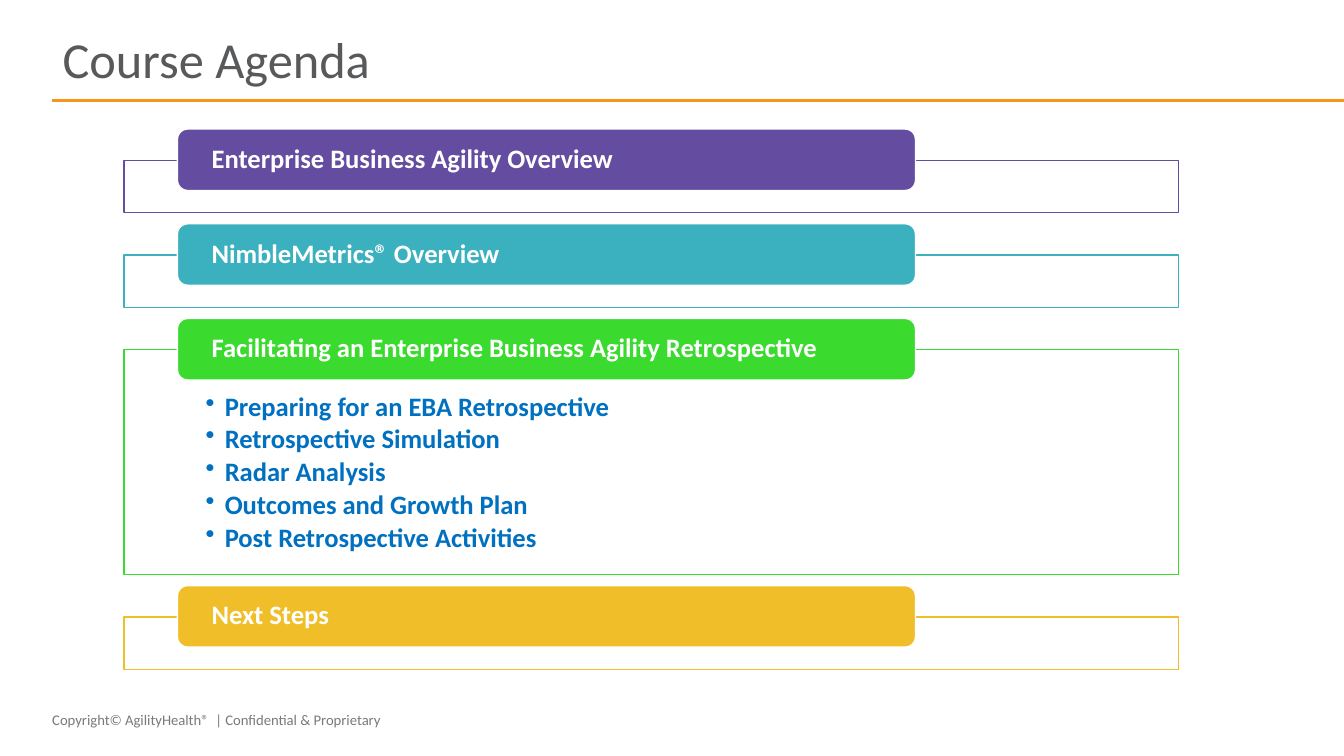
from pptx import Presentation
from pptx.dml.color import RGBColor
from pptx.enum.shapes import MSO_CONNECTOR, MSO_SHAPE
from pptx.enum.text import MSO_ANCHOR, MSO_AUTO_SIZE, PP_ALIGN
from pptx.oxml.ns import qn
from pptx.util import Inches, Pt
from lxml import etree

RECTANGLE, ROUNDED = MSO_SHAPE.RECTANGLE, MSO_SHAPE.ROUNDED_RECTANGLE
STRAIGHT = MSO_CONNECTOR.STRAIGHT
TOP, MIDDLE = MSO_ANCHOR.TOP, MSO_ANCHOR.MIDDLE
LEFT = PP_ALIGN.LEFT
GROW = MSO_AUTO_SIZE.SHAPE_TO_FIT_TEXT

WHITE = RGBColor(0xFF, 0xFF, 0xFF)
ORANGE = RGBColor(0xF7, 0x94, 0x1C)
TITLE_GRAY = RGBColor(0x58, 0x59, 0x5B)
FOOTER_GRAY = RGBColor(0x7A, 0x7A, 0x7A)
TOPIC_BLUE = RGBColor(0x00, 0x70, 0xC0)
PURPLE = RGBColor(0x64, 0x4C, 0xA0)
TEAL = RGBColor(0x3B, 0xB1, 0xBF)
GREEN = RGBColor(0x3B, 0xDA, 0x2F)
YELLOW = RGBColor(0xF0, 0xBE, 0x28)

TOPICS = [
    "Preparing for an EBA Retrospective",
    "Retrospective Simulation",
    "Radar Analysis",
    "Outcomes and Growth Plan",
    "Post Retrospective Activities",
]
SECTIONS = [
    ("Enterprise Business Agility Overview", PURPLE, 0.52, []),
    ("NimbleMetrics® Overview", TEAL, 0.52, []),
    ("Facilitating an Enterprise Business Agility Retrospective", GREEN, 2.23, TOPICS),
    ("Next Steps", YELLOW, 0.52, []),
]
FIRST_TOP = 1.28
BAR_HEIGHT = 0.61
BOX_OFFSET = 0.31
SECTION_GAP = 0.11


class AgendaSlide:
    """Holds the slide and its text style, and draws each kind of element."""

    def __init__(self, presentation, font_name):
        self.slide = presentation.slides.add_slide(presentation.slide_layouts[5])
        self.font_name = font_name

    def style(self, paragraph, size, color, bold=False):
        paragraph.alignment = LEFT
        font = paragraph.font
        font.name, font.size, font.bold = self.font_name, Pt(size), bold
        font.color.rgb = color

    def title(self, text, left, top, width, height):
        shape = self.slide.shapes.title
        shape.left, shape.top = Inches(left), Inches(top)
        shape.width, shape.height = Inches(width), Inches(height)
        frame = shape.text_frame
        frame.text = text
        frame.vertical_anchor = MIDDLE
        frame.paragraphs[0].line_spacing = 0.9
        self.style(frame.paragraphs[0], 36, TITLE_GRAY)

    def rule(self, left, right, top):
        line = self.slide.shapes.add_connector(
            STRAIGHT, Inches(left), Inches(top), Inches(right), Inches(top))
        line.line.color.rgb, line.line.width = ORANGE, Pt(2)
        etree.SubElement(line.element.spPr, qn("a:effectLst"))

    def footer(self, text, left, top, width, height):
        box = self.slide.shapes.add_textbox(
            Inches(left), Inches(top), Inches(width), Inches(height))
        frame = box.text_frame
        frame.word_wrap, frame.auto_size = True, GROW
        frame.text = text
        self.style(frame.paragraphs[0], 10.5, FOOTER_GRAY)

    def panel(self, kind, left, top, width, height, fill, outline):
        shape = self.slide.shapes.add_shape(
            kind, Inches(left), Inches(top), Inches(width), Inches(height))
        shape.shadow.inherit = False
        shape.fill.solid()
        shape.fill.fore_color.rgb = fill
        shape.line.color.rgb, shape.line.width = outline, Pt(1)
        return shape

    def heading(self, text, top, color):
        bar = self.panel(ROUNDED, 1.76, top, 7.32, BAR_HEIGHT, color, WHITE)
        frame = bar.text_frame
        frame.margin_left = frame.margin_right = Inches(0.31)
        frame.margin_top = frame.margin_bottom = 0
        frame.vertical_anchor = MIDDLE
        frame.text = text
        frame.paragraphs[0].line_spacing = 0.9
        self.style(frame.paragraphs[0], 19, WHITE, bold=True)

    def topic_box(self, topics, top, height, color):
        box = self.panel(RECTANGLE, 1.23, top, 10.46, height, WHITE, color)
        if not topics:
            return
        frame = box.text_frame
        frame.margin_left = frame.margin_right = Inches(0.81)
        frame.margin_top, frame.margin_bottom = Inches(0.43), Inches(0.15)
        frame.vertical_anchor = TOP
        frame.text = "\n".join(topics)
        for paragraph in frame.paragraphs:
            paragraph.line_spacing, paragraph.space_after = 0.9, Pt(2.85)
            properties = paragraph._p.get_or_add_pPr()
            properties.set("marL", str(Inches(0.19)))
            properties.set("indent", str(-Inches(0.19)))
            etree.SubElement(properties, qn("a:buChar"), char="•")
            self.style(paragraph, 19, TOPIC_BLUE, bold=True)


def main():
    presentation = Presentation()
    presentation.slide_width, presentation.slide_height = Inches(13.33), Inches(7.5)
    agenda = AgendaSlide(presentation, "Calibri")
    agenda.footer("Copyright© AgilityHealth®  | Confidential & Proprietary", 0.42, 7, 4.5, 0.28)
    agenda.rule(0.52, 13.33, 1)
    agenda.title("Course Agenda", 0.52, 0.27, 12.29, 0.7)
    top = FIRST_TOP
    for name, color, height, topics in SECTIONS:
        agenda.topic_box(topics, top + BOX_OFFSET, height, color)
        agenda.heading(name, top, color)
        top += BOX_OFFSET + height + SECTION_GAP
    presentation.save("out.pptx")


if __name__ == "__main__":
    main()
